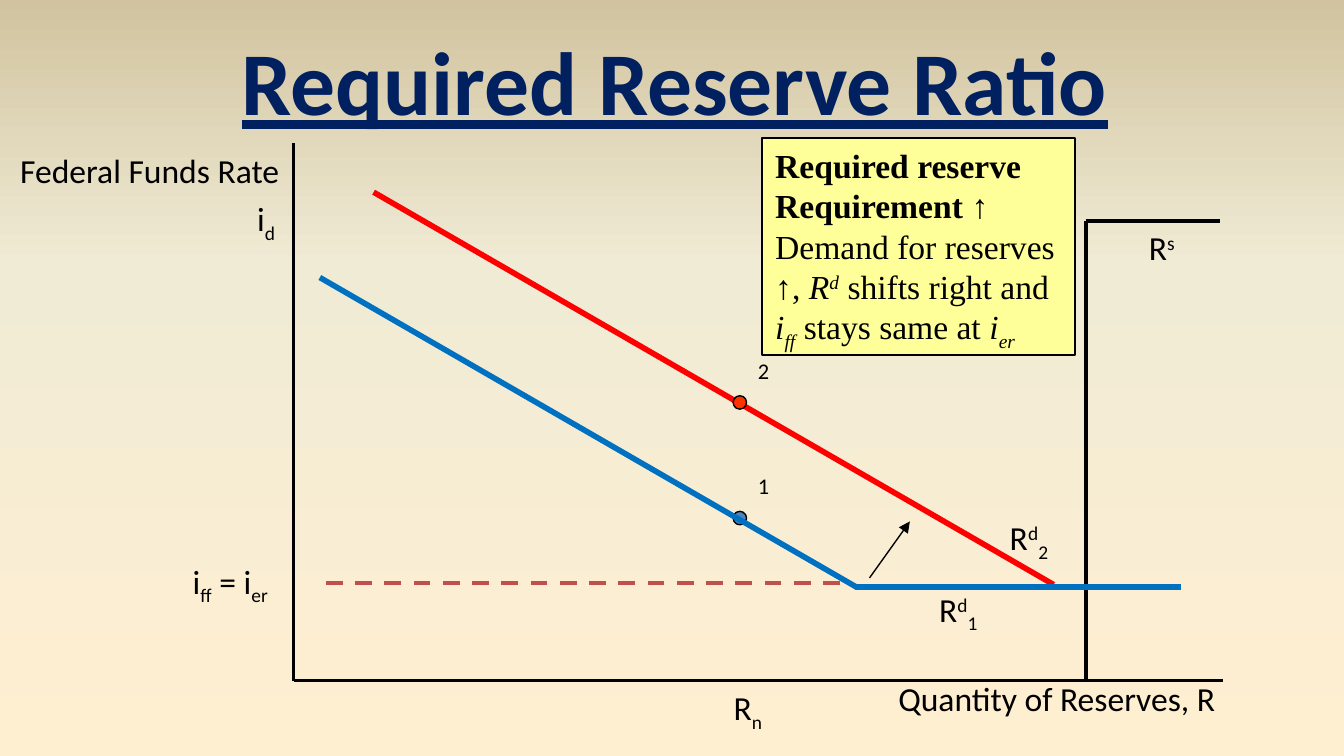
import copy
from dataclasses import dataclass

import pptx
import pptx.dml.color
import pptx.enum.dml
import pptx.enum.shapes
import pptx.enum.text
import pptx.oxml
import pptx.oxml.ns
import pptx.util

EMU_PER_PX = 4572  # 200 px to the inch
BASELINES = {"sup": 30000, "sub": -25000}


@dataclass(frozen=True)
class Theme:
    backdrop: tuple = ((0, "FFEFD1"), (0.65, "F0EBD5"), (1, "D1C39F"))
    ink: str = "000000"
    title: str = "002060"
    note: str = "FFFF99"
    demand_before: str = "0070C0"
    demand_after: str = "FF0000"
    rate: str = "C0504D"
    point_before: str = "4F81BD"
    point_after: str = "FF3300"
    font: str = "Calibri"
    note_font: str = "Times New Roman"
    arrow_font: str = "Arial"
    title_size: int = 48
    body_size: int = 18
    point_size: int = 12
    thin: float = 0.75
    note_line: float = 1
    axis: float = 1.5
    supply: float = 2.25
    demand: float = 3


THEME = Theme()


def px(value):
    return pptx.util.Emu(value * EMU_PER_PX)


def rgb(value):
    return pptx.dml.color.RGBColor.from_string(value)


def style_font(font, size, color=THEME.ink, name=THEME.font):
    font.size = pptx.util.Pt(size)
    font.name = name
    font.color.rgb = rgb(color)


def add_spans(para, spans):
    """Add runs given as (text, style words): b, i, sup, sub or arrow."""
    for text, style in spans:
        words = style.split()
        span = para.add_run()
        span.text = text
        if "b" in words:
            span.font.bold = True
        if "i" in words:
            span.font.italic = True
        if "arrow" in words:
            span.font.name = THEME.arrow_font
        for word in words:
            if word in BASELINES:
                span.font._element.set("baseline", str(BASELINES[word]))


def add_label(page, box, spans, size=THEME.body_size, color=THEME.ink,
              centred=False, wrap=False):
    frame = page.shapes.add_textbox(*map(px, box)).text_frame
    frame.word_wrap = wrap
    frame.auto_size = pptx.enum.text.MSO_AUTO_SIZE.SHAPE_TO_FIT_TEXT
    para = frame.paragraphs[0]
    if centred:
        para.alignment = pptx.enum.text.PP_ALIGN.CENTER
    add_spans(para, spans)
    style_font(para.font, size, color)
    return para


def add_line(page, origin, start, end, width, color=THEME.ink):
    left, top = origin
    line = page.shapes.add_connector(
        pptx.enum.shapes.MSO_CONNECTOR.STRAIGHT,
        px(left + start[0]), px(top + start[1]), px(left + end[0]), px(top + end[1]))
    line.line.width = pptx.util.Pt(width)
    line.line.color.rgb = rgb(color)
    line._element.spPr.append(pptx.oxml.parse_xml(
        f'<a:effectLst {pptx.oxml.ns.nsdecls("a")}/>'))
    return line


def add_filled(page, kind, box, fill, width):
    shape = page.shapes.add_shape(kind, *map(px, box))
    shape.shadow.inherit = False
    shape.fill.solid()
    shape.fill.fore_color.rgb = rgb(fill)
    shape.line.color.rgb = rgb(THEME.ink)
    shape.line.width = pptx.util.Pt(width)
    return shape


def paint_background(page):
    fill = page.background.fill
    fill.gradient()
    fill.gradient_angle = 90
    stops = page._element.find(".//" + pptx.oxml.ns.qn("a:gsLst"))
    stops.insert(1, copy.deepcopy(stops[0]))
    for stop, (position, color) in zip(fill.gradient_stops, THEME.backdrop):
        stop.position = position
        stop.color.rgb = rgb(color)


def add_title(page, box):
    para = add_label(page, box, [("Required Reserve Ratio", "")],
                     THEME.title_size, THEME.title, centred=True)
    para.font.bold = True
    para.font.underline = True


def add_note(page, box):
    note = add_filled(page, pptx.enum.shapes.MSO_SHAPE.RECTANGLE, box,
                      THEME.note, THEME.note_line)
    frame = note.text_frame
    frame.word_wrap = True
    frame.auto_size = pptx.enum.text.MSO_AUTO_SIZE.SHAPE_TO_FIT_TEXT
    frame.vertical_anchor = pptx.enum.text.MSO_ANCHOR.TOP
    heading, body = frame.paragraphs[0], frame.add_paragraph()
    add_spans(heading, [("Required reserve Requirement ", "b"), ("↑", "b arrow")])
    add_spans(body, [
        ("Demand for reserves ", ""), ("↑", "arrow"), (", ", ""),
        ("R", "i"), ("d", "i sup"), (" shifts right and ", ""),
        ("i", "i"), ("ff", "i sub"), (" stays same at ", ""),
        ("i", "i"), ("er", "i sub")])
    for para in frame.paragraphs:
        para.alignment = pptx.enum.text.PP_ALIGN.LEFT
        style_font(para.font, THEME.body_size, name=THEME.note_font)


def add_point(page, left, top, number, color):
    """Mark a numbered equilibrium, with the number above and to the right."""
    add_filled(page, pptx.enum.shapes.MSO_SHAPE.OVAL, (left, top, 20, 20),
               color, THEME.thin)
    add_label(page, (left + 17, top - 68, 58, 60), [(number, "")], THEME.point_size)


def add_market(page, box):
    """Draw the reserves market; the axes follow the left and bottom of the box."""
    left, top, width, height = box
    origin = (left, top)
    supply_x, supply_y, floor_y, rate_y = 1179, 116, 661, 655

    add_line(page, origin, (0, 0), (0, height), THEME.axis)
    add_line(page, origin, (0, height), (width, height), THEME.axis)
    add_line(page, origin, (supply_x, height), (supply_x, supply_y), THEME.supply)
    add_line(page, origin, (supply_x, supply_y), (supply_x + 200, supply_y), THEME.supply)

    rate = add_line(page, origin, (813, rate_y), (33, rate_y), THEME.supply, THEME.rate)
    rate.line.dash_style = pptx.enum.dml.MSO_LINE.DASH
    add_line(page, origin, (119, 73), (1131, 657), THEME.demand, THEME.demand_after)
    for y, number, color in ((548, "1", THEME.point_before),
                             (376, "2", THEME.point_after)):
        add_point(page, left + 654, top + y, number, color)
    shift = add_line(page, origin, (857, 647), (917, 563), THEME.thin)
    shift.line._get_or_add_ln().append(pptx.oxml.parse_xml(
        f'<a:tailEnd {pptx.oxml.ns.nsdecls("a")} type="triangle"/>'))
    add_line(page, origin, (39, 200), (838, floor_y), THEME.demand, THEME.demand_before)
    add_line(page, origin, (835, floor_y), (1321, floor_y), THEME.demand, THEME.demand_before)

    for x, y, label_width, spans in (
            (1253, 115, 94, [("R", ""), ("s", "sup")]),
            (-74, 72, 70, [("i", ""), ("d", "sub")]),
            (635, 800, 94, [("R", ""), ("n", "sub")]),
            (1046, 547, 114, [("R", ""), ("d", "sup"), ("2", "sub")]),
            (941, 653, 114, [("R", ""), ("d", "sup"), ("1", "sub")])):
        add_label(page, (left + x, top + y, label_width, 80), spans)
    add_label(page, (left - 170, top + 612, 166, 80),
              [("i", ""), ("ff", "sub"), (" = i", ""), ("er", "sub")], wrap=True)
    add_label(page, (left - 437, top, 446, 80), [("Federal Funds Rate", "")],
              centred=True, wrap=True)
    add_label(page, (left + 880, top + 786, 516, 80),
              [("Quantity of Reserves, R", "")], wrap=True)


def main():
    deck = pptx.Presentation()
    deck.slide_width, deck.slide_height = px(2000), px(1125)
    page = deck.slides.add_slide(deck.slide_layouts[6])
    paint_background(page)
    add_note(page, (1134, 206, 466, 323))
    add_market(page, (437, 213, 1383, 800))
    add_title(page, (333, 29, 1342, 182))
    deck.save("out.pptx")


if __name__ == "__main__":
    main()
